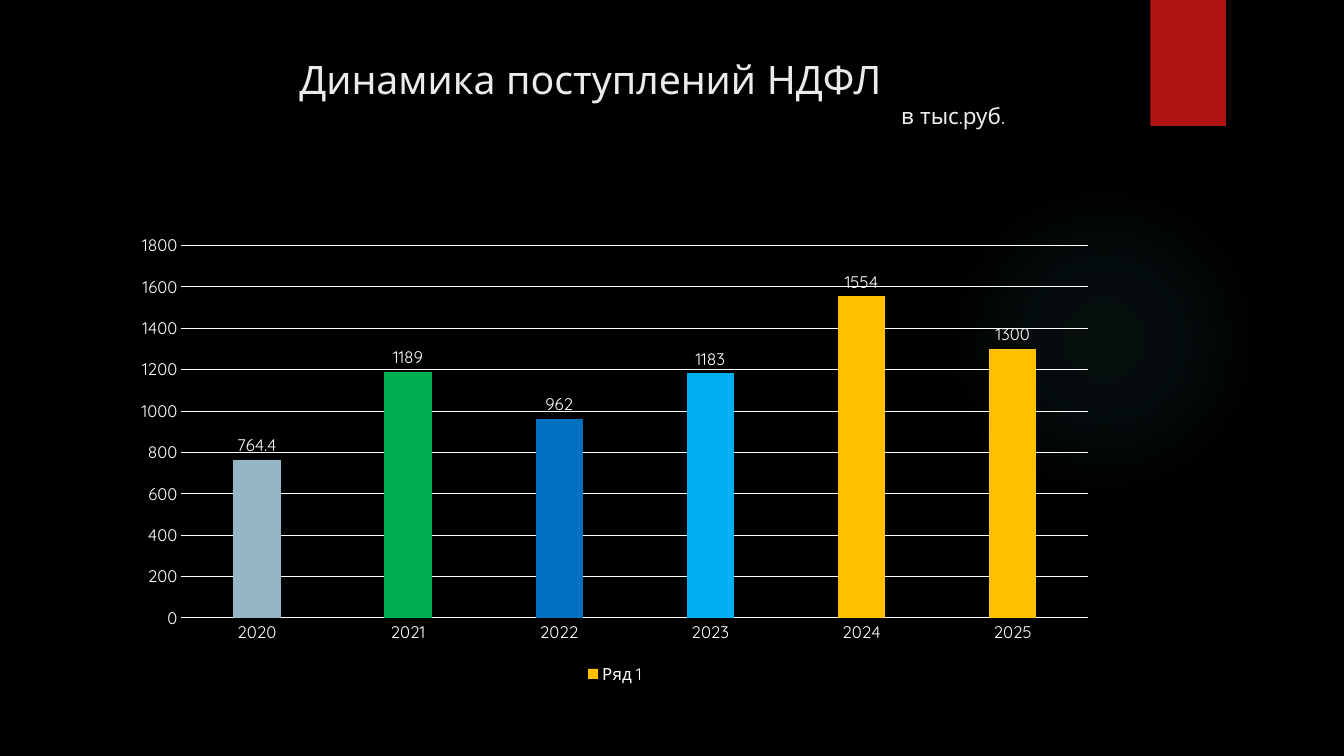
from lxml import etree
from pptx import Presentation
from pptx.chart.data import CategoryChartData
from pptx.dml.color import RGBColor
from pptx.enum.chart import XL_CHART_TYPE as Kind
from pptx.enum.chart import XL_LABEL_POSITION as Spot
from pptx.enum.chart import XL_LEGEND_POSITION as Side
from pptx.enum.chart import XL_TICK_MARK as Tick
from pptx.enum.shapes import MSO_SHAPE as Shape
from pptx.enum.text import MSO_ANCHOR as Anchor
from pptx.enum.text import PP_ALIGN as Align
from pptx.oxml import parse_xml
from pptx.util import Inches, Pt

FONT = "Quicksand"
WHITE = "FFFFFF"
NS = "http://schemas.openxmlformats.org/drawingml/2006/main"
SALES = {"2020": 764.4, "2021": 1189, "2022": 962,
         "2023": 1183, "2024": 1554, "2025": 1300}
TINTS = ["95B6C5", "00B050", "0070C0", "00B0F0"]


def color(code):
    return RGBColor.from_string(code)


def style(font, size, code):
    font.name = FONT
    font.size = Pt(size)
    font.color.rgb = color(code)


def add_plain(slide, kind, box):
    shape = slide.shapes.add_shape(kind, *map(Inches, box))
    shape.shadow.inherit = False
    shape.line.fill.background()
    return shape


def add_glow(slide, box):
    """Add a soft round light that fades out to its edge."""
    glow = add_plain(slide, Shape.OVAL, box)
    stops = "".join(
        f'<a:gs pos="{pos * 1000}"><a:srgbClr val="50B9C1">'
        f'<a:alpha val="{alpha * 1000}"/></a:srgbClr></a:gs>'
        for pos, alpha in [(0, 7), (36, 6), (69, 0)])
    fade = parse_xml(
        f'<a:gradFill xmlns:a="{NS}" rotWithShape="1"><a:gsLst>{stops}</a:gsLst>'
        '<a:path path="circle"><a:fillToRect l="50000" t="50000" '
        'r="50000" b="50000"/></a:path></a:gradFill>')
    glow._element.spPr.find(f"{{{NS}}}prstGeom").addnext(fade)


def add_tab(slide, box):
    tab = add_plain(slide, Shape.RECTANGLE, box)
    tab.fill.solid()
    tab.fill.fore_color.rgb = color("B01513")


def add_title(slide, box):
    frame = slide.shapes.add_textbox(*map(Inches, box)).text_frame
    frame.word_wrap = True
    frame.vertical_anchor = Anchor.TOP
    frame.text = "Динамика поступлений НДФЛ\nв тыс.руб."
    head, unit = frame.paragraphs
    head.alignment = Align.CENTER
    unit.alignment = Align.LEFT
    unit._p.get_or_add_pPr().set("marL", str(Inches(8.13)))
    for para, size in [(head, 28), (unit, 16)]:
        style(para.runs[0].font, size, "EBEBEB")


def add_bars(slide, box):
    data = CategoryChartData()
    data.categories = list(SALES)
    data.add_series("Ряд 1", list(SALES.values()))
    chart = slide.shapes.add_chart(
        Kind.COLUMN_CLUSTERED, *map(Inches, box), data).chart
    style(chart.font, 12, WHITE)
    chart.has_title = False
    chart.has_legend = True
    chart.legend.position = Side.BOTTOM
    chart.legend.include_in_layout = False
    style(chart.legend.font, 12, WHITE)

    cats, vals = chart.category_axis, chart.value_axis
    for axis in (cats, vals):
        axis.major_tick_mark = axis.minor_tick_mark = Tick.NONE
        style(axis.tick_labels.font, 12, WHITE)
    vals.minimum_scale, vals.maximum_scale, vals.major_unit = 0, 1800, 200
    vals.format.line.fill.background()
    for line in (cats.format.line, vals.major_gridlines.format.line):
        line.color.rgb = color(WHITE)
        line.width = Pt(0.75)

    plot = chart.plots[0]
    plot.vary_by_categories = False
    plot.gap_width = 219
    plot.overlap = -27
    bars = plot.series[0]
    bars.invert_if_negative = False
    for part, tint in [(bars, "FFC000"),
                       *((bars.points[i], t) for i, t in enumerate(TINTS))]:
        part.format.fill.solid()
        part.format.fill.fore_color.rgb = color(tint)
    labels = bars.data_labels
    labels.show_value = True
    labels.position = Spot.OUTSIDE_END
    style(labels.font, 12, WHITE)


def main():
    deck = Presentation()
    deck.slide_width = Inches(13.33)
    deck.slide_height = Inches(7.5)
    slide = deck.slides.add_slide(deck.slide_layouts[6])
    slide.background.fill.solid()
    slide.background.fill.fore_color.rgb = color("000000")
    add_glow(slide, (9.41, 1.83, 3.08, 3.08))
    add_tab(slide, (11.41, 0, 0.75, 1.25))
    add_title(slide, (0.71, 0.5, 10.29, 1.53))
    add_bars(slide, (1.21, 2.24, 9.78, 4.59))
    deck.save("out.pptx")


if __name__ == "__main__":
    main()
